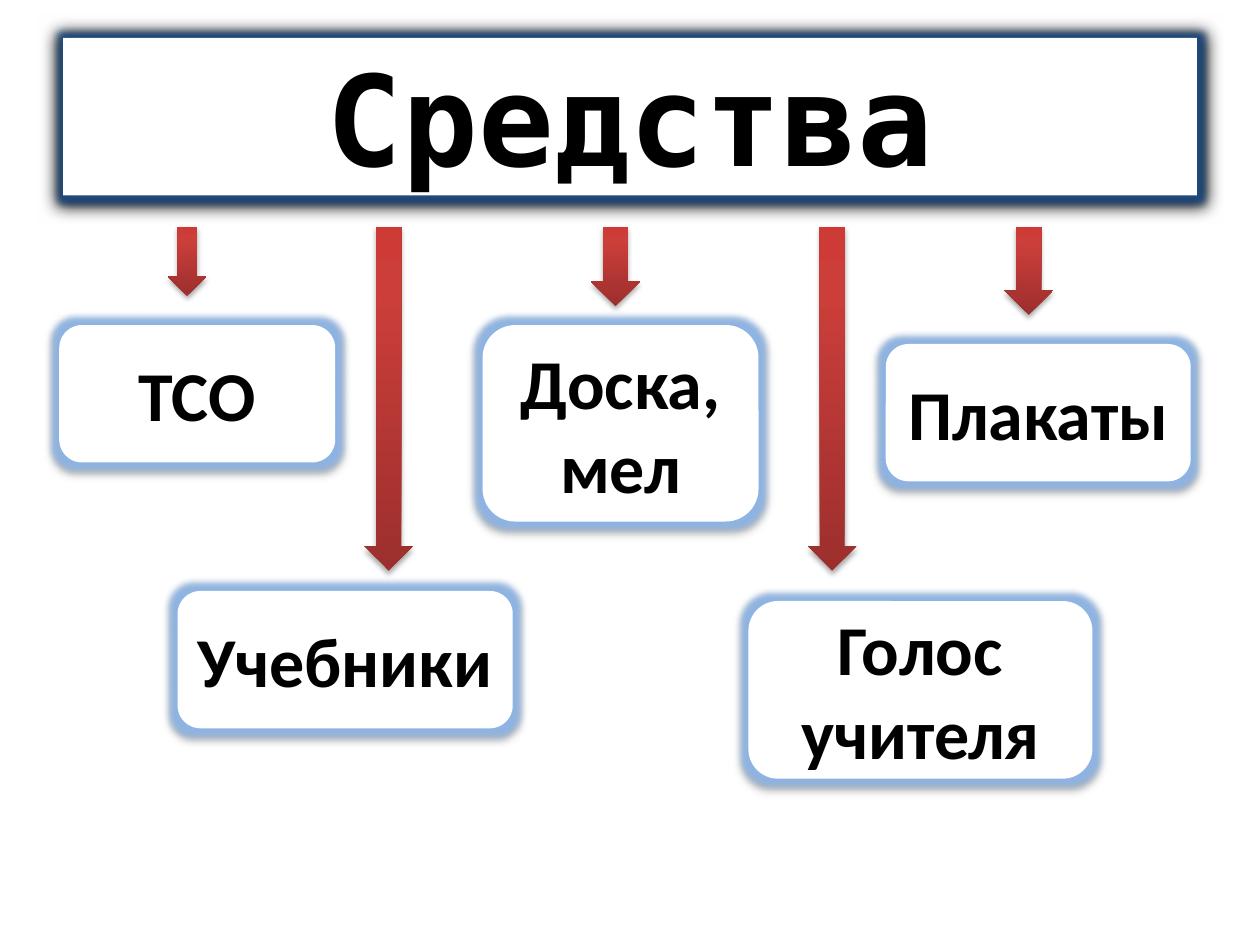
from copy import deepcopy
from dataclasses import dataclass

from lxml import etree
from pptx import Presentation
from pptx.dml.color import RGBColor
from pptx.enum import shapes, text
from pptx.oxml import ns
from pptx.util import Inches, Pt


@dataclass(frozen=True)
class Theme:
    ink: str = "000000"
    paper: str = "FFFFFF"
    title_glow: str = "1F497D"
    card_glow: str = "8EB4E3"
    arrow_stops: tuple = ((0, "9C2F2D"), (0.8, "CB3E3A"), (1, "CE3B37"))
    title_font: str = "DejaVu Sans Mono"
    card_font: str = "Calibri"
    title_size: int = 72
    card_size: int = 40
    glow_radius: int = 8
    # Shadows: opacity in percent, blur and distance in points
    title_shadow: tuple = (100, 8.5, 1)
    card_shadow: tuple = (32, 3.5, 2.2)
    arrow_shadow: tuple = (35, 3.1, 1.8)


THEME = Theme()
ARROW_TOP = 1.8

# Label, left, top, width, height
CARDS = [
    ("ТСО", 0.47, 2.58, 2.19, 1.09),
    ("Учебники", 1.41, 4.69, 2.66, 1.09),
    ("Голос учителя", 5.94, 4.77, 2.73, 1.41),
    ("Доска, мел", 3.83, 2.58, 2.19, 1.56),
    ("Плакаты", 7.03, 2.73, 2.42, 1.09),
]

# Left, width, height
ARROWS = [
    (6.41, 0.39, 2.73),
    (7.97, 0.39, 0.7),
    (4.69, 0.39, 0.63),
    (2.89, 0.39, 2.73),
    (1.33, 0.31, 0.55),
]


def add_effect(effects, tag, color, opacity, **attributes):
    effect = etree.SubElement(effects, ns.qn(tag))
    for name, value in attributes.items():
        effect.set(name, str(value))
    tint = etree.SubElement(effect, ns.qn("a:srgbClr"), val=color)
    etree.SubElement(tint, ns.qn("a:alpha"), val=str(opacity * 1000))


def set_effects(shape, shadow, glow=None):
    """Give a shape a downward shadow and, if asked, a coloured glow."""
    shape.shadow.inherit = False
    effects = shape._element.spPr.find(ns.qn("a:effectLst"))
    if glow:
        add_effect(effects, "a:glow", glow, 100, rad=Pt(THEME.glow_radius))
    opacity, blur, distance = shadow
    add_effect(effects, "a:outerShdw", THEME.ink, opacity, blurRad=Pt(blur),
               dist=Pt(distance), dir=90 * 60000, rotWithShape=0)


def style_panel(panel, label, font_name, size, shadow, glow):
    """White panel without outline, holding one bold centred label."""
    panel.fill.solid()
    panel.fill.fore_color.rgb = RGBColor.from_string(THEME.paper)
    panel.line.fill.background()
    set_effects(panel, shadow, glow)
    frame = panel.text_frame
    frame.text = label
    frame.word_wrap = True
    frame.auto_size = text.MSO_AUTO_SIZE.NONE
    frame.vertical_anchor = text.MSO_ANCHOR.MIDDLE
    paragraph = frame.paragraphs[0]
    paragraph.alignment = text.PP_ALIGN.CENTER
    font = paragraph.font
    font.name, font.size, font.bold = font_name, Pt(size), True
    font.color.rgb = RGBColor.from_string(THEME.ink)


def set_title(slide, label):
    title = slide.shapes.title
    title.left, title.top = Inches(0.5), Inches(0.3)
    title.width, title.height = Inches(9), Inches(1.25)
    style_panel(title, label, THEME.title_font, THEME.title_size,
                THEME.title_shadow, THEME.title_glow)


def add_card(slide, label, *box):
    card = slide.shapes.add_shape(
        shapes.MSO_SHAPE.ROUNDED_RECTANGLE, *map(Inches, box))
    style_panel(card, label, THEME.card_font, THEME.card_size,
                THEME.card_shadow, THEME.card_glow)


def add_arrow(slide, left, width, height):
    arrow = slide.shapes.add_shape(
        shapes.MSO_SHAPE.DOWN_ARROW,
        *map(Inches, (left, ARROW_TOP, width, height)))
    arrow.line.fill.background()
    fill = arrow.fill
    fill.gradient()
    fill.gradient_angle = 90
    # The default gradient has two stops; a third is needed
    stop_list = arrow._element.spPr.find(".//" + ns.qn("a:gsLst"))
    stop_list.append(deepcopy(stop_list[-1]))
    for stop, (position, color) in zip(fill.gradient_stops, THEME.arrow_stops):
        stop.position = position
        stop.color.rgb = RGBColor.from_string(color)
    set_effects(arrow, THEME.arrow_shadow)


def main():
    deck = Presentation()
    deck.slide_width, deck.slide_height = Inches(10), Inches(7.5)
    slide = deck.slides.add_slide(deck.slide_layouts.get_by_name("Title Only"))

    # Heading
    set_title(slide, "Средства")

    # Teaching aids
    for card in CARDS:
        add_card(slide, *card)

    # Arrows from the heading to each aid
    for arrow in ARROWS:
        add_arrow(slide, *arrow)

    deck.save("out.pptx")


if __name__ == "__main__":
    main()
